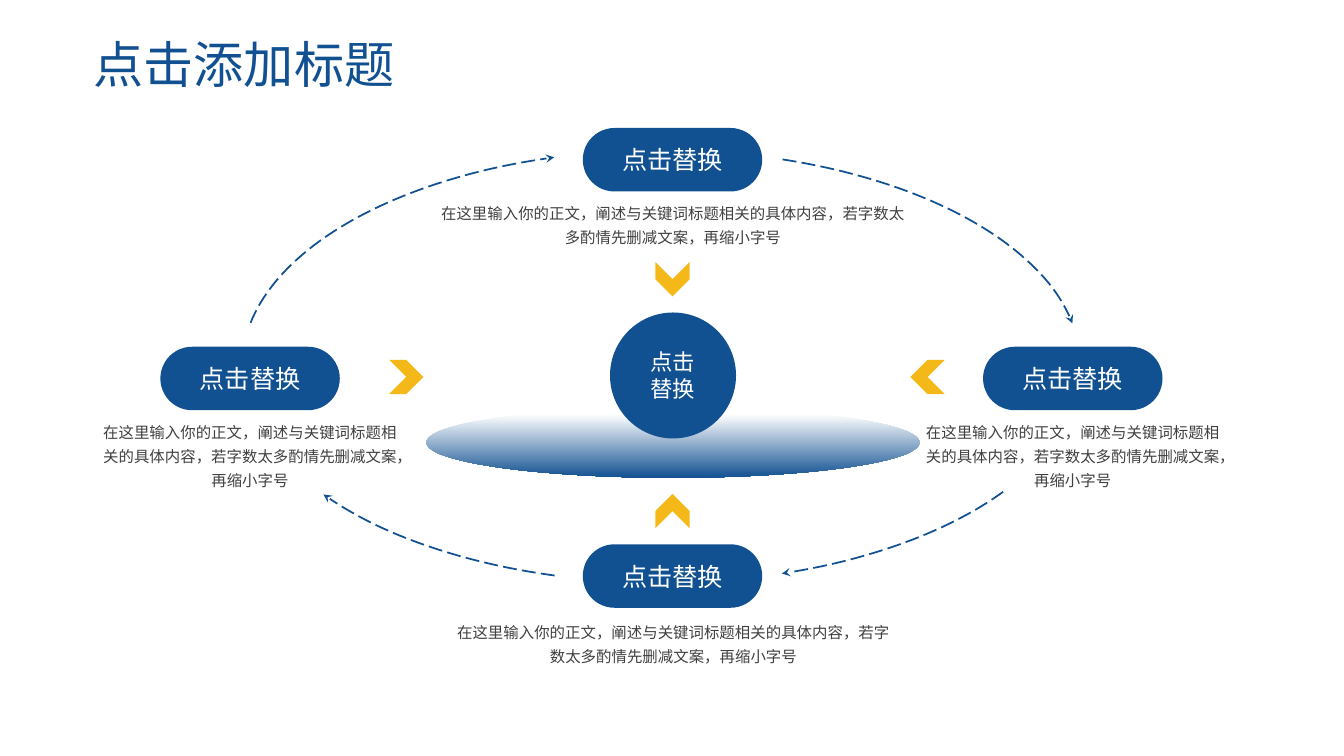
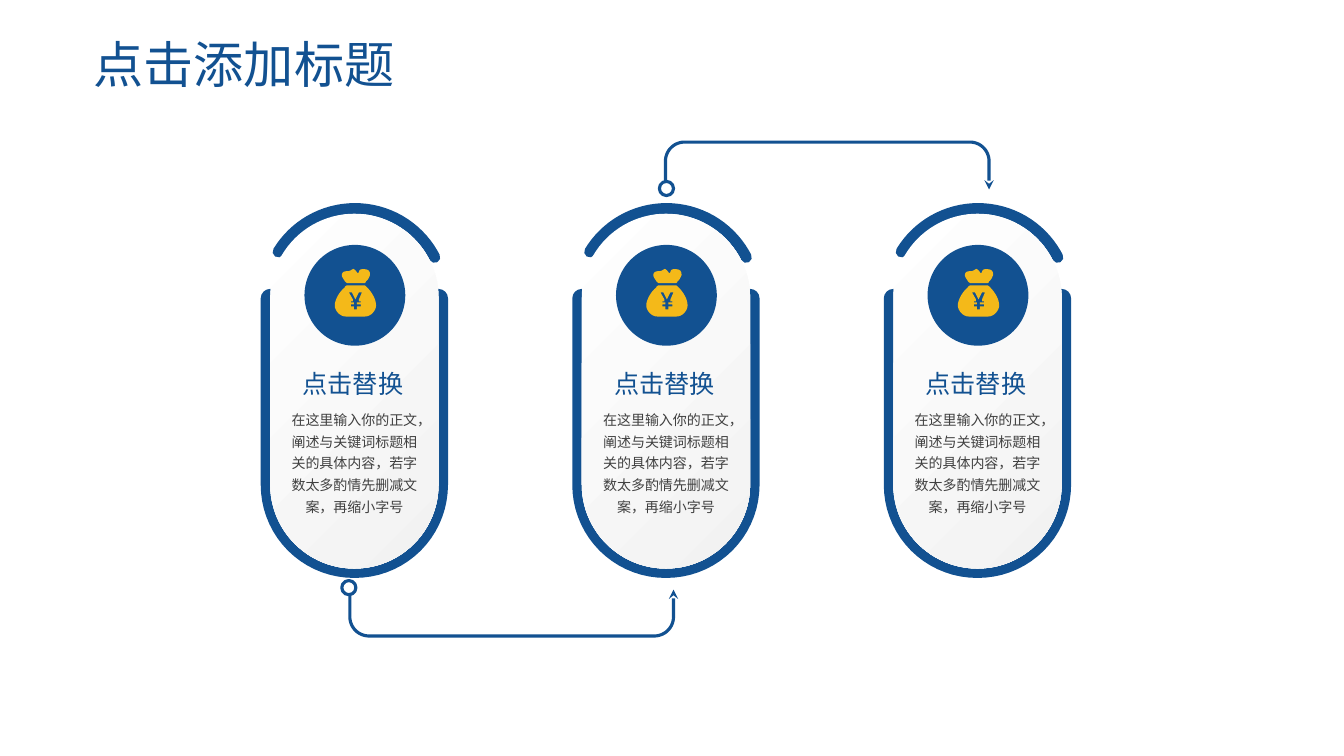
from dataclasses import dataclass
from math import cos, radians, sin

from lxml.etree import SubElement
from pptx import Presentation
from pptx.dml.color import RGBColor
from pptx.enum.dml import MSO_LINE
from pptx.enum.shapes import MSO_SHAPE
from pptx.enum.text import MSO_ANCHOR, MSO_AUTO_SIZE, PP_ALIGN
from pptx.oxml.ns import qn
from pptx.util import Inches, Pt


@dataclass(frozen=True)
class Theme:
    """Colours, typeface and type sizes shared by the slides."""
    blue: str = "125191"
    gold: str = "F4B919"
    ink: str = "404040"
    white: str = "FFFFFF"
    pale: str = "F2F2F2"
    face: str = "Noto Sans CJK SC"
    title: float = 35.8
    label: float = 18
    hub: float = 16
    body: float = 11
    card_body: float = 10


THEME = Theme()
TITLE = "点击添加标题"
LABEL = "点击替换"
BODY = "在这里输入你的正文，阐述与关键词标题相关的具体内容，若字数太多酌情先删减文案，再缩小字号"

BAG_TIE = [(13, 15), (29, 15), (30, 15, 31, 14, 31, 13), (33, 12, 34, 9, 35, 7),
           (35, 3, 34, 1, 28, 1), (23, 1, 25, 4, 23, 5), (22, 5, 22, 3, 19, 1),
           (18, 0, 16, 3, 13, 3), (11, 3, 7, 3, 7, 7), (7, 9, 9, 11, 10, 13),
           (11, 14, 12, 15, 13, 15)]
BAG_BODY = [(32, 19), (31, 18, 30, 17, 29, 17), (13, 17), (12, 17, 10, 18, 10, 19),
            (4, 24, 0, 32, 0, 37), (0, 42, 5, 48, 11, 48), (30, 48),
            (36, 48, 41, 42, 41, 37), (41, 31, 37, 24, 32, 19)]
YUAN_SIGN = [(27, 24), (24, 31), (24, 33), (26, 33), (26, 34), (22, 34), (22, 36),
             (26, 36), (26, 38), (22, 38), (22, 41), (19, 41), (19, 38), (16, 38),
             (16, 36), (19, 36), (19, 34), (16, 34), (16, 33), (18, 33), (18, 31),
             (14, 24), (17, 24), (20.5, 31), (24, 24)]


def rgb(colour):
    """Turn a hex string into a colour."""
    return RGBColor.from_string(colour)


def write(frame, text, *, size, colour, align=PP_ALIGN.CENTER, spacing=None,
          anchor=MSO_ANCHOR.TOP, inset=0, wrap=True):
    """Fill a text frame, one paragraph per line of text."""
    frame.word_wrap = wrap
    frame.auto_size = MSO_AUTO_SIZE.NONE
    frame.vertical_anchor = anchor
    frame.margin_left = frame.margin_right = Inches(inset)
    frame.margin_top = frame.margin_bottom = Inches(inset / 2)
    for index, line in enumerate(text.split("\n")):
        paragraph = frame.add_paragraph() if index else frame.paragraphs[0]
        paragraph.alignment = align
        paragraph.line_spacing = spacing
        run = paragraph.add_run()
        run.text = line
        run.font.size = Pt(size)
        run.font.name = THEME.face
        run.font.color.rgb = rgb(colour)
        properties = run._r.get_or_add_rPr()
        properties.set("lang", "zh-CN")
        SubElement(properties, qn("a:ea")).set("typeface", THEME.face)


def flatten(contour, steps=8):
    """Turn points and cubic curve segments into plain points."""
    points = [contour[0]]
    for segment in contour[1:]:
        if len(segment) == 2:
            points.append(segment)
            continue
        x0, y0 = points[-1]
        x1, y1, x2, y2, x3, y3 = segment
        for step in range(1, steps + 1):
            t = step / steps
            a, b, c, d = (1 - t) ** 3, 3 * t * (1 - t) ** 2, 3 * t * t * (1 - t), t ** 3
            points.append((a * x0 + b * x1 + c * x2 + d * x3,
                           a * y0 + b * y1 + c * y2 + d * y3))
    return points


class Deck:
    """Holds the presentation and draws on its current slide."""

    def __init__(self):
        """Open a widescreen presentation."""
        self.presentation = Presentation()
        self.presentation.slide_width = Inches(13.33)
        self.presentation.slide_height = Inches(7.5)
        self.shapes = None

    def new_slide(self, title):
        """Add a slide with the common title."""
        slide = self.presentation.slides.add_slide(self.presentation.slide_layouts[5])
        self.shapes = slide.shapes
        heading = self.shapes.title
        heading.left, heading.top = Inches(0.83), Inches(0.35)
        heading.width, heading.height = Inches(11.5), Inches(0.5)
        write(heading.text_frame, title, size=THEME.title, colour=THEME.blue,
              align=PP_ALIGN.LEFT, spacing=0.9, inset=0.1)

    def text(self, box, text, **form):
        """Place a text box."""
        write(self.shapes.add_textbox(*map(Inches, box)).text_frame, text, **form)

    def shape(self, kind, box, fill=None, rotation=0, adjust=()):
        """Place a preset shape without outline."""
        shape = self.shapes.add_shape(kind, *map(Inches, box))
        for index, value in enumerate(adjust):
            shape.adjustments[index] = value
        shape.rotation = rotation
        self.paint(shape, fill)
        return shape

    def paint(self, shape, fill):
        """Give a shape a plain fill or none, and no outline or shadow."""
        shape.shadow.inherit = False
        shape.line.fill.background()
        if fill:
            shape.fill.solid()
            shape.fill.fore_color.rgb = rgb(fill)
        else:
            shape.fill.background()

    def gradient(self, shape, angle, *stops):
        """Fill a shape with a two-stop gradient."""
        shape.fill.gradient()
        shape.fill.gradient_angle = angle
        for stop, (position, colour) in zip(shape.fill.gradient_stops, stops):
            stop.position = position
            stop.color.rgb = rgb(colour)

    def outline(self, shape, width, dash=None, cap=None, arrow=None):
        """Give a shape a blue outline with optional dash, cap and arrowhead."""
        shape.line.color.rgb = rgb(THEME.blue)
        shape.line.width = Pt(width)
        if dash:
            shape.line.dash_style = dash
        stroke = shape._element.spPr.find(qn("a:ln"))
        if cap:
            stroke.set("cap", cap)
        if arrow:
            SubElement(stroke, qn(f"a:{arrow}")).set("type", "stealth")

    def arc(self, box, start, end, width, **stroke):
        """Draw an arc between two angles in degrees."""
        arc = self.shape(MSO_SHAPE.ARC, box, adjust=(start * 0.6, end * 0.6))
        self.outline(arc, width, **stroke)

    def outlines(self, contours, close, fill=None):
        """Draw a freeform from contours given in inches."""
        builder = None
        for contour in contours:
            points = [(Inches(x), Inches(y)) for x, y in contour]
            if builder is None:
                builder = self.shapes.build_freeform(*points[0])
            else:
                builder.move_to(*points[0])
            builder.add_line_segments(points[1:], close=close)
        shape = builder.convert_to_shape()
        self.paint(shape, fill)
        return shape

    def bracket(self, left, mouth, span, depth, radius, width, **stroke):
        """Draw a round-cornered U; a negative depth turns it over."""
        right = left + span
        turn = 1 if depth > 0 else -1
        points = [(right, mouth)]
        for centre, first in ((right - radius, 0), (left + radius, 90)):
            points += [(centre + radius * cos(radians(angle)),
                        mouth + depth - turn * radius * (1 - sin(radians(angle))))
                       for angle in range(first, first + 91, 5)]
        points.append((left, mouth))
        self.outline(self.outlines([points], False), width, **stroke)

    def pill(self, left, top):
        """Draw a labelled pill."""
        pill = self.shape(MSO_SHAPE.ROUNDED_RECTANGLE, (left, top, 1.78, 0.63),
                          THEME.blue, adjust=(0.5,))
        write(pill.text_frame, LABEL, size=THEME.label, colour=THEME.white,
              anchor=MSO_ANCHOR.MIDDLE, inset=0.1)

    def money_bag(self, left, top):
        """Draw the money bag icon with its cut-out sign."""
        contours = [[(left + x / 100, top + y / 100) for x, y in flatten(part)]
                    for part in (BAG_TIE, BAG_BODY, YUAN_SIGN)]
        self.outlines(contours, True, THEME.gold)

    def ring(self, left, top):
        """Draw the small ring where a link starts."""
        ring = self.shape(MSO_SHAPE.OVAL, (left, top, 0.14, 0.14), THEME.white)
        self.outline(ring, 2.25)

    def card(self, left):
        """Draw one capsule card."""
        self.arc((left - 0.05, 2.07, 1.78, 1.78), 211.26, 332.74, 8, cap="rnd")
        self.bracket(left, 2.96, 1.67, 2.68, 0.83, 13.5, cap="rnd")
        capsule = self.shape(MSO_SHAPE.ROUNDED_RECTANGLE, (left, 2.12, 1.67, 3.52),
                             adjust=(0.5,))
        self.gradient(capsule, 315, (0, THEME.white), (1, THEME.pale))
        self.shape(MSO_SHAPE.OVAL, (left + 0.34, 2.43, 1, 1), THEME.blue)
        self.text((left + 0.32, 3.65, 1, 0.3), LABEL, size=THEME.label,
                  colour=THEME.blue, wrap=False)
        self.money_bag(left + 0.64, 2.66)
        self.text((left + 0.15, 4.03, 1.37, 1.07), BODY, size=THEME.card_body,
                  colour=THEME.ink, spacing=1.3)


def cycle_slide(deck):
    """Build the four-step cycle around a hub."""
    deck.new_slide(TITLE)
    for start, end in ((300.34, 354.01), (20.16, 59.81), (117.05, 159.24), (186.05, 242.85)):
        deck.arc((2.4, 1.49, 8.32, 4.29), start, end, 1.25,
                 dash=MSO_LINE.LONG_DASH, arrow="tailEnd")
    disc = deck.shape(MSO_SHAPE.OVAL, (4.23, 4.04, 4.89, 0.7))
    deck.gradient(disc, 270, (0.1, THEME.white), (1, THEME.blue))
    hub = deck.shape(MSO_SHAPE.OVAL, (6.05, 3.1, 1.25, 1.25), THEME.blue)
    write(hub.text_frame, "点击\n替换", size=THEME.hub, colour=THEME.white,
          anchor=MSO_ANCHOR.MIDDLE)
    steps = (((5.78, 1.27), (4.32, 1.97, 4.71, 0.47), (6.5, 2.6), 90),
             ((9.75, 3.44), (9.12, 4.14, 3.04, 0.71), (9.03, 3.57), 180),
             ((5.78, 5.4), (4.47, 6.13, 4.42, 0.47), (6.5, 4.9), 270),
             ((1.59, 3.44), (0.96, 4.14, 3.04, 0.71), (3.86, 3.57), 0))
    for pill, body, chevron, direction in steps:
        deck.pill(*pill)
        deck.text(body, BODY, size=THEME.body, colour=THEME.ink, spacing=1.3)
        deck.shape(MSO_SHAPE.CHEVRON, (*chevron, 0.34, 0.34), THEME.gold, direction)


def cards_slide(deck):
    """Build the three linked cards."""
    deck.new_slide(TITLE)
    for column in range(3):
        deck.card(2.68 + 3.09 * column)
    for left, mouth, depth in ((3.47, 5.85, 0.46), (6.6, 1.88, -0.47)):
        deck.bracket(left, mouth, 3.21, depth, 0.19, 2.25, arrow="headEnd")
    deck.ring(3.39, 5.76)
    deck.ring(6.54, 1.8)


def main():
    """Build and save the deck."""
    deck = Deck()
    cycle_slide(deck)
    cards_slide(deck)
    deck.presentation.save("out.pptx")


if __name__ == "__main__":
    main()
